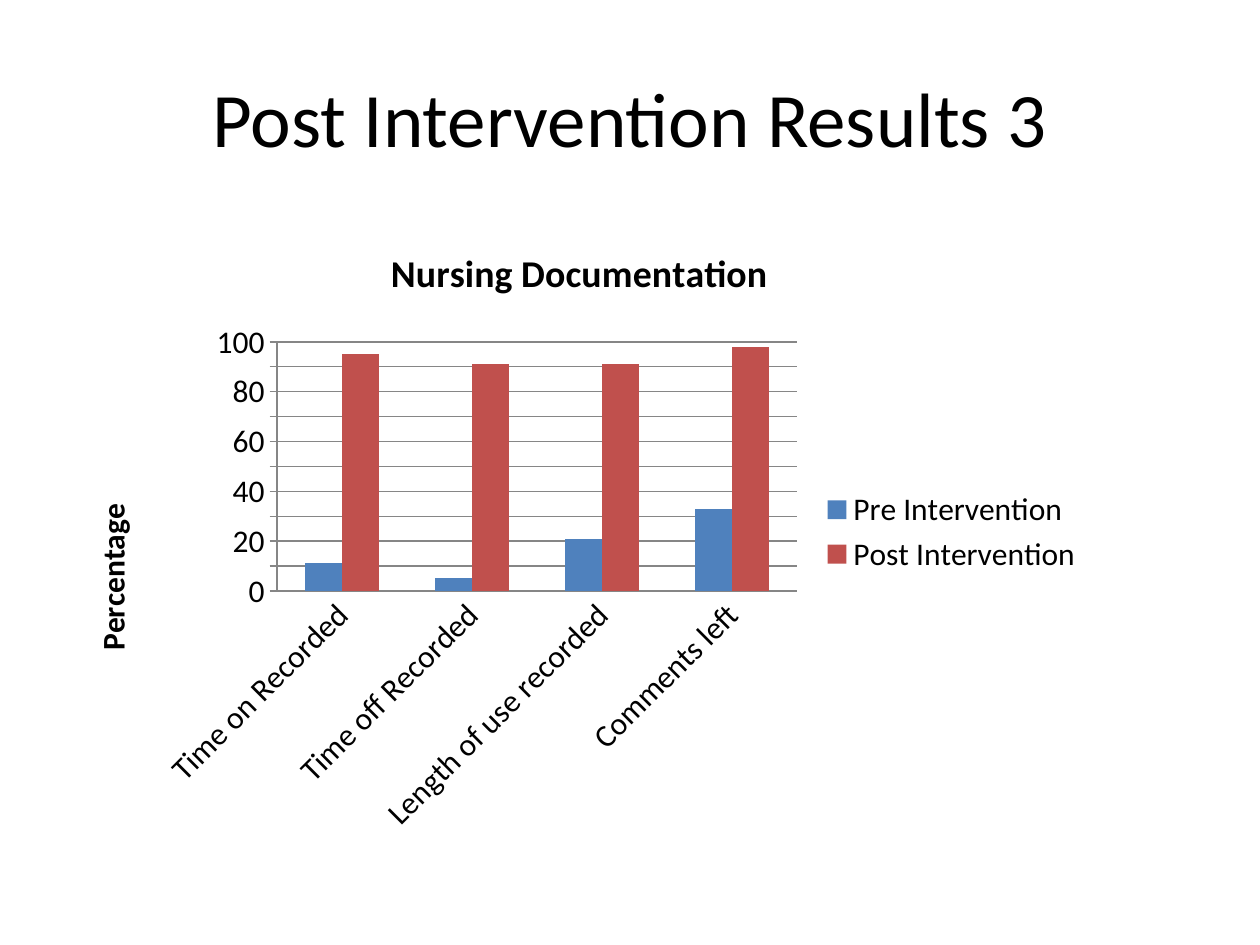
from lxml import etree
from pptx import Presentation
from pptx import util as u
from pptx.chart import data as chart_data
from pptx.dml import color
from pptx.enum import chart as charts, text
from pptx.oxml import ns

# Content
TITLE = "Post Intervention Results 3"
CHART_TITLE = "Nursing Documentation"
AXIS_TITLE = "Percentage"
CATEGORIES = ["Time on Recorded", "Time off Recorded",
              "Length of use recorded", "Comments left"]
SERIES = [("Pre Intervention", (11, 5, 21, 33), "pre"),
          ("Post Intervention", (95, 91, 91, 98), "post")]

# Boxes in px: left, top, width, height
SLIDE_SIZE = (1260, 945)
TITLE_BOX = (63, 38, 1134, 157)
CHART_BOX = (63, 220, 1033, 624)
PLOT_BOX = (277, 342, 520, 249)
AXIS_TITLE_CORNER = (85, 498)
THEME = {
    "font": "Calibri",
    "sizes": {"title": 44, "chart_title": 21.6, "chart": 18},
    "colors": {"ink": "000000", "line": "868686", "pre": "4F81BD", "post": "C0504D"},
}


def px(value):
    return u.Emu(round(value * 914400 / 126))


def rgb(name):
    return color.RGBColor.from_string(THEME["colors"][name])


def style_font(font, size, bold=False):
    font.name = THEME["font"]
    font.size = u.Pt(THEME["sizes"][size])
    font.bold = bold
    font.color.rgb = rgb("ink")


def add_run(frame, words, size, bold=False):
    paragraph = frame.paragraphs[0]
    run = paragraph.add_run()
    run.text = words
    style_font(run.font, size, bold)
    return paragraph


def style_line(line):
    line.color.rgb = rgb("line")
    line.width = u.Pt(0.75)


def place(parent, index, left, top, width=None, height=None):
    """Fix a chart part at a px place, stored as fractions of the chart."""
    chart_left, chart_top, chart_width, chart_height = CHART_BOX
    settings = {"layoutTarget": "inner"} if width else {}
    settings.update(xMode="edge", yMode="edge",
                    x=(left - chart_left) / chart_width,
                    y=(top - chart_top) / chart_height)
    if width:
        settings.update(w=width / chart_width, h=height / chart_height)
    for old in parent.findall(ns.qn("c:layout")):
        parent.remove(old)
    layout = etree.Element(ns.qn("c:layout"))
    manual = etree.SubElement(layout, ns.qn("c:manualLayout"))
    for name, value in settings.items():
        etree.SubElement(manual, ns.qn(f"c:{name}")).set("val", str(value))
    parent.insert(index, layout)


def add_title(slide):
    shape = slide.shapes.title
    shape.left, shape.top, shape.width, shape.height = map(px, TITLE_BOX)
    shape.text_frame.vertical_anchor = text.MSO_ANCHOR.MIDDLE
    paragraph = add_run(shape.text_frame, TITLE, "title")
    paragraph.alignment = text.PP_ALIGN.CENTER


def add_results_chart(slide):
    data = chart_data.CategoryChartData()
    data.categories = CATEGORIES
    for name, values, _ in SERIES:
        data.add_series(name, values)
    chart = slide.shapes.add_chart(
        charts.XL_CHART_TYPE.COLUMN_CLUSTERED, *map(px, CHART_BOX), data).chart
    style_font(chart.font, "chart")

    # Titles and legend
    chart.has_title = True
    add_run(chart.chart_title.text_frame, CHART_TITLE, "chart_title", True)
    chart.has_legend = True
    chart.legend.position = charts.XL_LEGEND_POSITION.RIGHT
    chart.legend.include_in_layout = False

    # Columns
    plot = chart.plots[0]
    plot.gap_width = 150
    plot.overlap = 0
    plot.vary_by_categories = False
    for series, (_, _, fill) in zip(plot.series, SERIES):
        series.format.fill.solid()
        series.format.fill.fore_color.rgb = rgb(fill)
        series.invert_if_negative = False

    # Axes, with slanted category labels
    category_axis, value_axis = chart.category_axis, chart.value_axis
    category_axis.major_tick_mark = charts.XL_TICK_MARK.NONE
    style_font(category_axis.tick_labels.font, "chart")
    labels = category_axis._element.find(ns.qn("c:txPr"))
    labels.find(ns.qn("a:bodyPr")).set("rot", "-2700000")
    value_axis.major_tick_mark = charts.XL_TICK_MARK.CROSS
    value_axis.minimum_scale, value_axis.maximum_scale = 0, 100
    value_axis.major_unit = 10
    value_axis.has_major_gridlines = True
    for part in (category_axis, value_axis, value_axis.major_gridlines):
        style_line(part.format.line)
    value_axis.has_title = True
    frame = value_axis.axis_title.text_frame
    add_run(frame, AXIS_TITLE, "chart", True)
    body = frame._txBody.find(ns.qn("a:bodyPr"))
    body.set("rot", "-5400000")
    body.set("vert", "horz")

    # Fixed places for the plot and the value axis title
    place(chart._chartSpace.chart.plotArea, 0, *PLOT_BOX)
    place(value_axis.axis_title._element, 1, *AXIS_TITLE_CORNER)


def main():
    presentation = Presentation()
    presentation.slide_width, presentation.slide_height = map(px, SLIDE_SIZE)
    slide = presentation.slides.add_slide(presentation.slide_layouts[5])
    add_title(slide)
    add_results_chart(slide)
    presentation.save("out.pptx")


if __name__ == "__main__":
    main()
